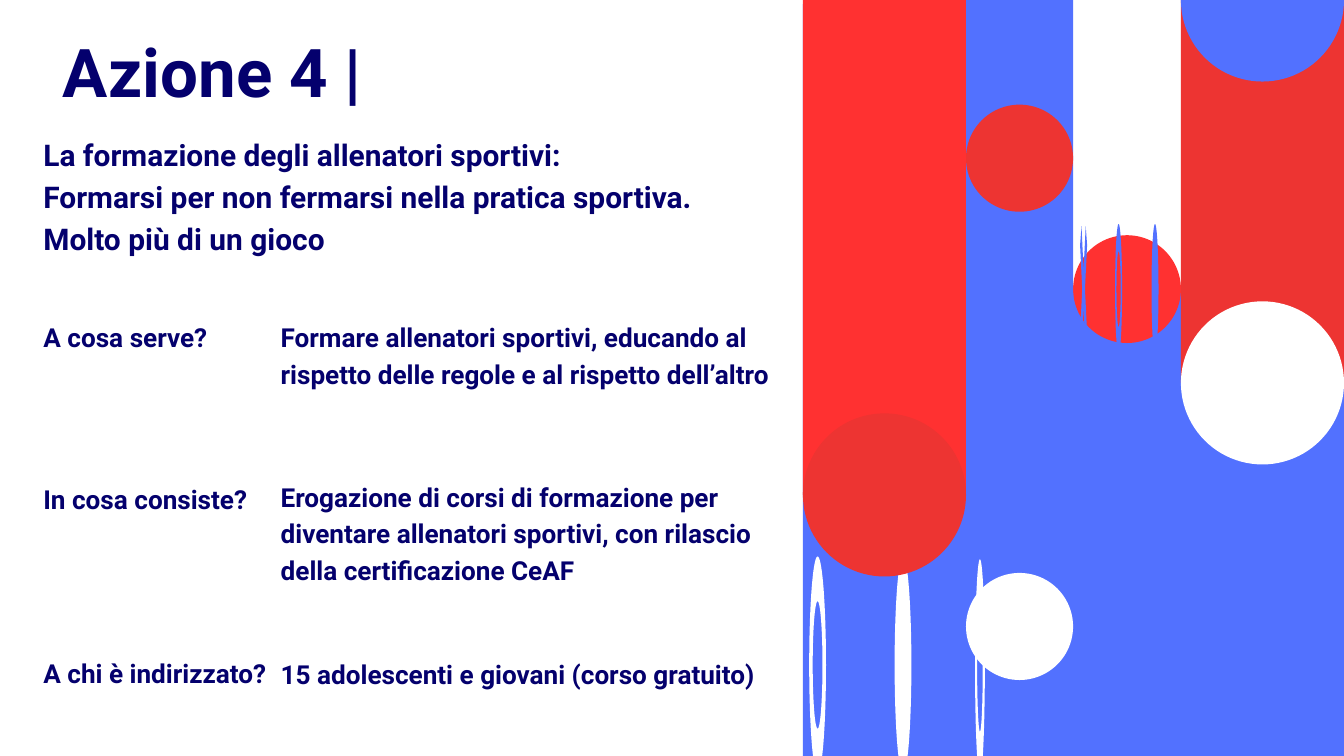
from math import cos, pi, sin

from pptx import Presentation
from pptx.dml.color import RGBColor
from pptx.enum.shapes import MSO_SHAPE
from pptx.enum.text import MSO_AUTO_SIZE
from pptx.util import Pt

PX = 9525
RECT = MSO_SHAPE.RECTANGLE
OVAL = MSO_SHAPE.OVAL
FIT_TEXT = MSO_AUTO_SIZE.SHAPE_TO_FIT_TEXT

BLUE, WHITE, RED, DARK_RED = "5271FF", "FFFFFF", "FF3131", "ED3432"
EDGES = [1147, 1380, 1533, 1687, 1920]


def emu(px):
    return round(px * PX)


def color(hex_string):
    return RGBColor.from_string(hex_string)


def write(paragraph, text, size, leading, font="Roboto", ink="04006D", bold=True):
    paragraph.line_spacing = Pt(leading)
    run = paragraph.add_run()
    run.text = text
    run.font.name = font
    run.font.size = Pt(size)
    run.font.bold = bold
    run.font.color.rgb = color(ink)


def ellipse_points(cx, cy, rx, ry, steps=72):
    angles = [2 * pi * step / steps for step in range(steps)]
    return [(cx + rx * cos(a), cy + ry * sin(a)) for a in angles]


class Poster:
    def __init__(self, slide):
        self.slide = slide
        self.slide.background.fill.solid()
        self.slide.background.fill.fore_color.rgb = color(WHITE)

    def paint(self, shape, fill):
        shape.shadow.inherit = False
        shape.fill.solid()
        shape.fill.fore_color.rgb = color(fill)
        shape.line.fill.background()

    def block(self, preset, left, top, width, height, fill):
        box = map(emu, (left, top, width, height))
        self.paint(self.slide.shapes.add_shape(preset, *box), fill)

    def column(self, index, top, bottom, fill):
        left, right = EDGES[index:index + 2]
        self.block(RECT, left, top, right - left, bottom - top, fill)

    def circle(self, index, cy, fill):
        left, right = EDGES[index:index + 2]
        diameter = right - left
        self.block(OVAL, left, cy - diameter / 2, diameter, diameter, fill)

    def ellipse(self, cx, cy, rx, ry, fill):
        self.block(OVAL, cx - rx, cy - ry, 2 * rx, 2 * ry, fill)

    def outline(self, contours, fill):
        scaled = [[(emu(x), emu(y)) for x, y in contour] for contour in contours]
        builder = self.slide.shapes.build_freeform(*scaled[0][0], scale=1)
        builder.add_line_segments(scaled[0][1:], close=True)
        for contour in scaled[1:]:
            builder.move_to(*contour[0])
            builder.add_line_segments(contour[1:], close=True)
        self.paint(builder.convert_to_shape(), fill)

    def ring(self, cx, cy, outer, inner, fill):
        hole = ellipse_points(cx, cy, *inner)[::-1]
        self.outline([ellipse_points(cx, cy, *outer), hole], fill)

    def cross(self, cx, cy, fill):
        right = [(0, -27), (3, -90), (5, -63), (2, 0), (5, 63), (3, 90)]
        left = [(-x, -y) for x, y in right]
        self.outline([[(cx + x, cy + y) for x, y in right + left]], fill)

    def text(self, left, top, width, height, lines, size, leading):
        box = self.slide.shapes.add_textbox(*map(emu, (left, top, width, height)))
        frame = box.text_frame
        frame.word_wrap = True
        frame.auto_size = FIT_TEXT
        frame.margin_left = frame.margin_right = 0
        frame.margin_top = frame.margin_bottom = 0
        for number, line in enumerate(lines):
            paragraph = frame.add_paragraph() if number else frame.paragraphs[0]
            write(paragraph, line, size=size, leading=leading)


def draw_pattern(poster):
    poster.block(RECT, EDGES[0], 6, EDGES[-1] - EDGES[0], 1080, BLUE)
    poster.column(2, -19, 413, WHITE)
    poster.circle(2, 413, RED)
    poster.column(1, -52, 895, BLUE)

    poster.cross(1548, 413, BLUE)
    poster.ring(1598, 413, (5, 93), (3, 54), BLUE)
    poster.ellipse(1650, 413, 5, 93, BLUE)

    poster.circle(1, 895, WHITE)
    poster.circle(1, 226, DARK_RED)
    poster.column(3, -241, 547, DARK_RED)
    poster.column(0, -81, 707, RED)

    poster.ring(1168, 950, (12, 155), (7, 91), WHITE)
    poster.ellipse(1290, 950, 12, 155, WHITE)
    poster.ring(1400, 954, (7, 155), (4, 91), WHITE)

    poster.circle(3, 547, WHITE)
    poster.circle(3, 0, BLUE)
    poster.circle(0, 707, DARK_RED)


def write_content(poster):
    poster.text(90, 63, 889, 101, ["Azione 4 |"], 72, 72)
    poster.text(62, 187, 1065, 176, [
        "La formazione degli allenatori sportivi:",
        "Formarsi per non fermarsi nella pratica sportiva.",
        "Molto più di un gioco",
    ], 32, 44.8)

    topics = [
        ("A cosa serve?", 451, 290,
         "Formare allenatori sportivi, educando al rispetto delle regole"
         " e al rispetto dell’altro", 452, 103),
        ("In cosa consiste?", 683, 324,
         "Erogazione di corsi di formazione per diventare allenatori sportivi,"
         " con rilascio della certificazione CeAF", 680, 155),
        ("A chi è indirizzato?", 932, 358,
         "15 adolescenti e giovani (corso gratuito)", 933, 51),
    ]
    for question, question_top, width, answer, answer_top, height in topics:
        poster.text(62, question_top, width, 51, [question], 28, 39.2)
        poster.text(401, answer_top, 732, height, [answer], 28, 39.2)


def main():
    deck = Presentation()
    deck.slide_width = emu(1920)
    deck.slide_height = emu(1080)
    poster = Poster(deck.slides.add_slide(deck.slide_layouts[6]))
    draw_pattern(poster)
    write_content(poster)
    deck.save("out.pptx")


if __name__ == "__main__":
    main()
